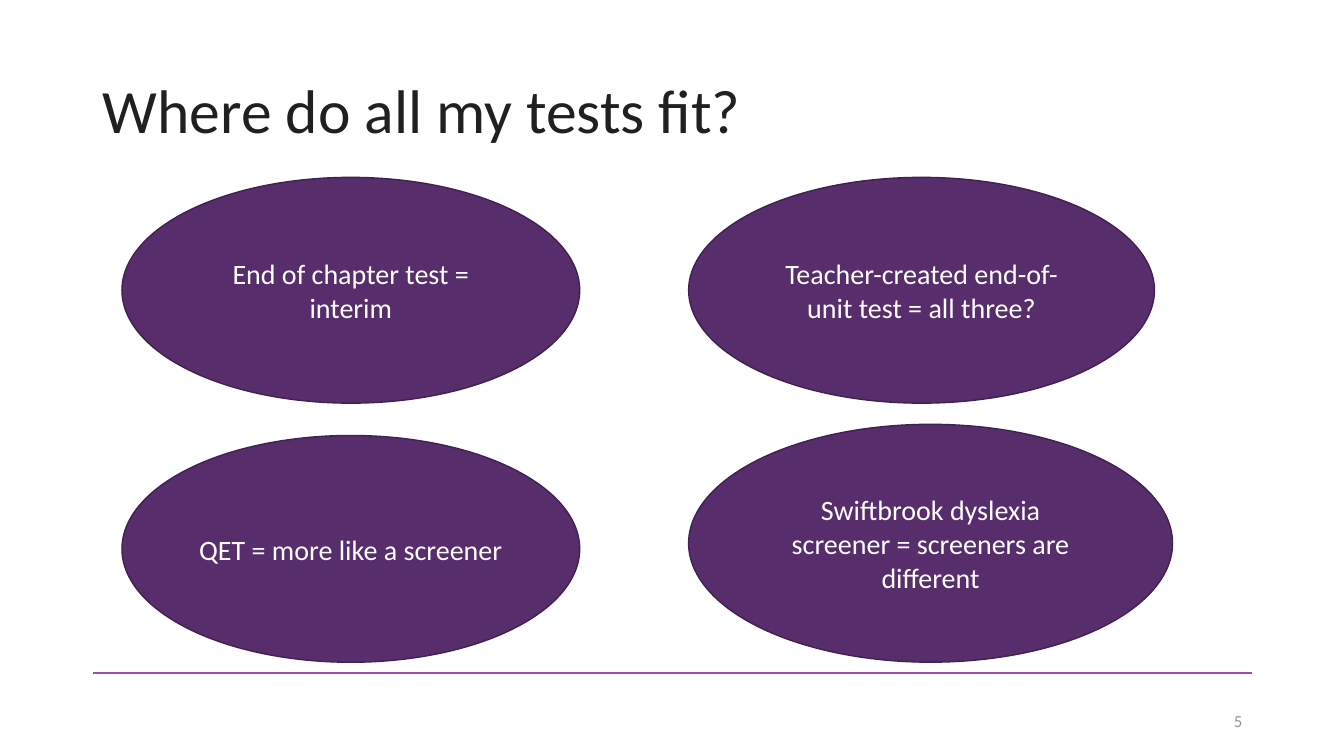
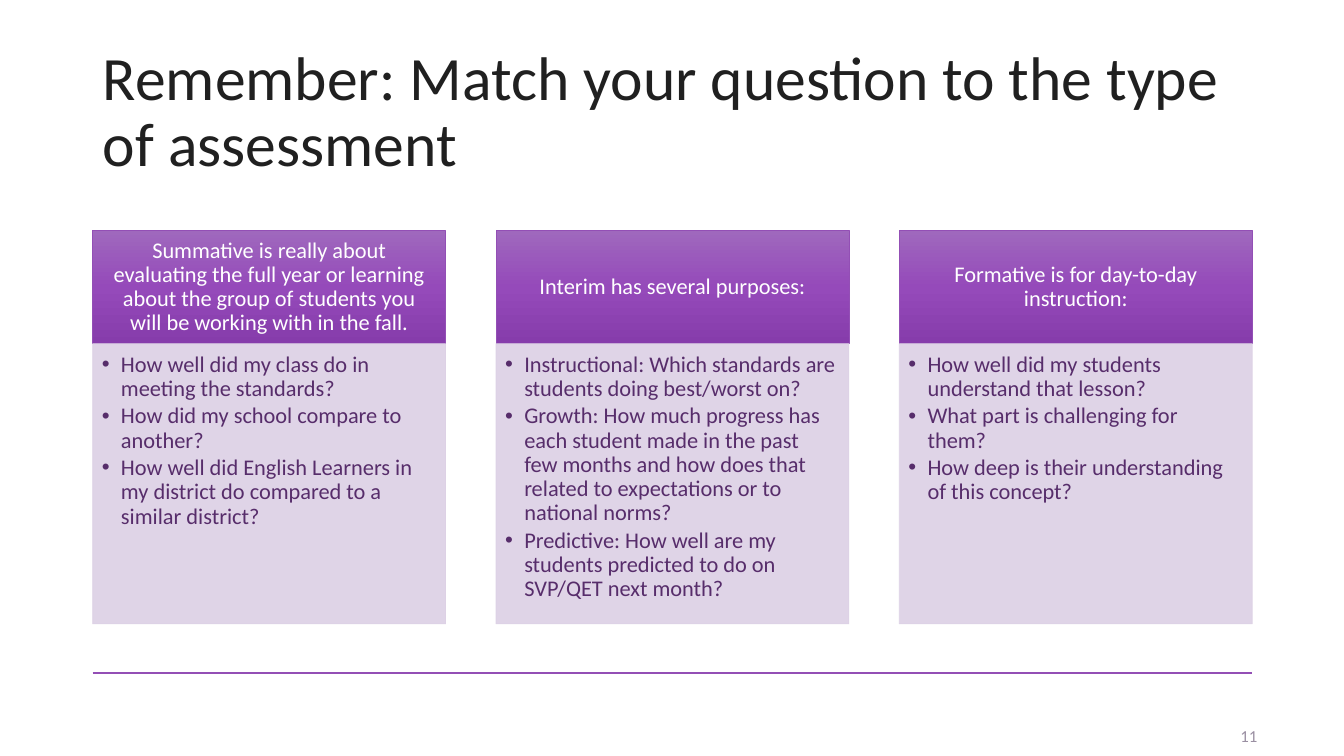
from copy import deepcopy

from pptx import Presentation
from pptx.dml.color import RGBColor
from pptx.enum.shapes import MSO_CONNECTOR as Connector, MSO_SHAPE as Shape
from pptx.enum.text import MSO_ANCHOR as Anchor, MSO_AUTO_SIZE as AutoSize, PP_ALIGN as Align
from pptx.oxml.ns import qn
from pptx.oxml.xmlchemy import OxmlElement
from pptx.util import Inches, Pt

# Shared style
FONT = "Calibri"
INK = RGBColor(0x20, 0x20, 0x20)
GREY = RGBColor(0x9A, 0x8F, 0xA2)
WHITE = RGBColor(0xFF, 0xFF, 0xFF)
VIOLET = RGBColor(0x93, 0x4F, 0xB5)
PLUM = RGBColor(0x57, 0x2D, 0x6B)
DARK_PLUM = RGBColor(0x40, 0x21, 0x4F)
LILAC = RGBColor(0xDC, 0xD0, 0xE5)
HEADER_STOPS = [
    (0, RGBColor(0x9F, 0x68, 0xBD)),
    (0.5, RGBColor(0x95, 0x4A, 0xBA)),
    (1, RGBColor(0x86, 0x3C, 0xAB)),
]

# Page grid, in inches
PAGE_WIDTH, PAGE_HEIGHT = 13.33, 7.5
LEFT, CONTENT_WIDTH = 0.92, 11.5
RULE_TOP = 6.68
CARD_TOP, CARD_WIDTH = 2.29, 3.5
HEADER_HEIGHT, BODY_HEIGHT = 1.12, 2.78
DEFAULT_INSETS = (0.1, 0.05, 0.1, 0.05)

# Text and place (left, top, width, height) of each test
TESTS = [
    ("End of chapter test = interim", (1.21, 1.76, 4.54, 2.24)),
    ("Teacher-created end-of-unit test = all three?", (6.83, 1.76, 4.62, 2.24)),
    ("QET = more like a screener", (1.21, 4.32, 4.54, 2.25)),
    ("Swiftbrook dyslexia screener = screeners are different", (6.83, 4.21, 4.8, 2.36)),
]

# Header and questions of each card
ASSESSMENTS = [
    (
        "Summative is really about evaluating the full year or learning about "
        "the group of students you will be working with in the fall.",
        [
            "How well did my class do in meeting the standards?",
            "How did my school compare to another?",
            "How well did English Learners in my district do compared to a similar district?",
        ],
    ),
    (
        "Interim has several purposes:",
        [
            "Instructional: Which standards are students doing best/worst on?",
            "Growth: How much progress has each student made in the past few months "
            "and how does that related to expectations or to national norms?",
            "Predictive: How well are my students predicted to do on SVP/QET next month?",
        ],
    ),
    (
        "Formative is for day-to-day instruction:",
        [
            "How well did my students understand that lesson?",
            "What part is challenging for them?",
            "How deep is their understanding of this concept?",
        ],
    ),
]


def add_bullet(para, indent=0.19):
    props = para._p.get_or_add_pPr()
    props.set("marL", str(Inches(indent)))
    props.set("indent", str(-Inches(indent)))
    for tag, name, value in (("a:buFont", "typeface", "Arial"), ("a:buChar", "char", "•")):
        mark = OxmlElement(tag)
        mark.set(name, value)
        props.append(mark)


def write(box, *lines, size, color, align=Align.LEFT, anchor=Anchor.MIDDLE,
          spacing=1.0, after=0, bullets=False, insets=DEFAULT_INSETS):
    """Fill a shape or placeholder with one paragraph per line."""
    frame = box.text_frame
    frame.word_wrap = True
    frame.auto_size = AutoSize.NONE
    frame.vertical_anchor = anchor
    (frame.margin_left, frame.margin_top,
     frame.margin_right, frame.margin_bottom) = map(Inches, insets)
    for index, line in enumerate(lines):
        para = frame.add_paragraph() if index else frame.paragraphs[0]
        para.alignment = align
        para.line_spacing = spacing
        para.space_after = Pt(after)
        if bullets:
            add_bullet(para)
        span = para.add_run()
        span.text = line
        span.font.name = FONT
        span.font.size = Pt(size)
        span.font.color.rgb = color


def add_panel(page, kind, place, fill, line, line_width):
    panel = page.shapes.add_shape(kind, *map(Inches, place))
    panel.shadow.inherit = False
    panel.fill.solid()
    panel.fill.fore_color.rgb = fill
    panel.line.color.rgb = line
    panel.line.width = Pt(line_width)
    return panel


def shade(panel, stops):
    """Give a panel a top-to-bottom gradient."""
    panel.fill.gradient()
    panel.fill.gradient_angle = 270
    stop_list = panel.element.spPr.find(qn("a:gradFill")).find(qn("a:gsLst"))
    while len(stop_list) < len(stops):
        stop_list.append(deepcopy(stop_list[0]))
    for stop, (position, color) in zip(panel.fill.gradient_stops, stops):
        stop.position = position
        stop.color.rgb = color


def set_opacity(panel, percent):
    for color in panel.element.spPr.iter(qn("a:srgbClr")):
        alpha = OxmlElement("a:alpha")
        alpha.set("val", str(percent * 1000))
        color.append(alpha)


def add_page(deck, title, number, number_place):
    """Add a page with its rule, title and page number."""
    page = deck.slides.add_slide(deck.slide_layouts.get_by_name("Title Only"))
    rule = page.shapes.add_connector(
        Connector.STRAIGHT, Inches(LEFT), Inches(RULE_TOP),
        Inches(LEFT + CONTENT_WIDTH), Inches(RULE_TOP))
    rule.line.color.rgb = VIOLET
    rule.line.width = Pt(1.5)
    rule.element.spPr.append(OxmlElement("a:effectLst"))

    heading = page.shapes.title
    heading.left, heading.top = Inches(LEFT), Inches(0.4)
    heading.width, heading.height = Inches(CONTENT_WIDTH), Inches(1.45)
    write(heading, title, size=44, color=INK, spacing=0.9)

    number_box = page.shapes.add_textbox(*map(Inches, (*number_place, 3, 0.4)))
    write(number_box, str(number), size=12, color=GREY, align=Align.RIGHT)
    return page


def add_test(page, text, place):
    oval = add_panel(page, Shape.OVAL, place, PLUM, DARK_PLUM, 1)
    write(oval, text, size=20, color=WHITE, align=Align.CENTER)


def add_card(page, left, heading, questions):
    header = add_panel(page, Shape.RECTANGLE, (left, CARD_TOP, CARD_WIDTH, HEADER_HEIGHT),
                       VIOLET, VIOLET, 0.5)
    shade(header, HEADER_STOPS)
    write(header, heading, size=16, color=WHITE, align=Align.CENTER, spacing=0.9,
          insets=(0.12, 0.07, 0.12, 0.07))

    body = add_panel(page, Shape.RECTANGLE,
                     (left, CARD_TOP + HEADER_HEIGHT, CARD_WIDTH, BODY_HEIGHT),
                     LILAC, LILAC, 0.5)
    set_opacity(body, 90)
    write(body, *questions, size=16, color=PLUM, anchor=Anchor.TOP, spacing=0.9,
          after=2.5, bullets=True, insets=(0.09, 0.09, 0.12, 0.14))


def main():
    deck = Presentation()
    deck.slide_width, deck.slide_height = Inches(PAGE_WIDTH), Inches(PAGE_HEIGHT)

    # Kinds of test
    page = add_page(deck, "Where do all my tests fit?", 5, (9.42, 6.95))
    for text, place in TESTS:
        add_test(page, text, place)

    # Questions by type of assessment
    page = add_page(deck, "Remember: Match your question to the type of assessment",
                    11, (9.57, 7.1))
    pitch = (CONTENT_WIDTH - CARD_WIDTH) / (len(ASSESSMENTS) - 1)
    for column, (heading, questions) in enumerate(ASSESSMENTS):
        add_card(page, LEFT + column * pitch, heading, questions)

    deck.save("out.pptx")


if __name__ == "__main__":
    main()
